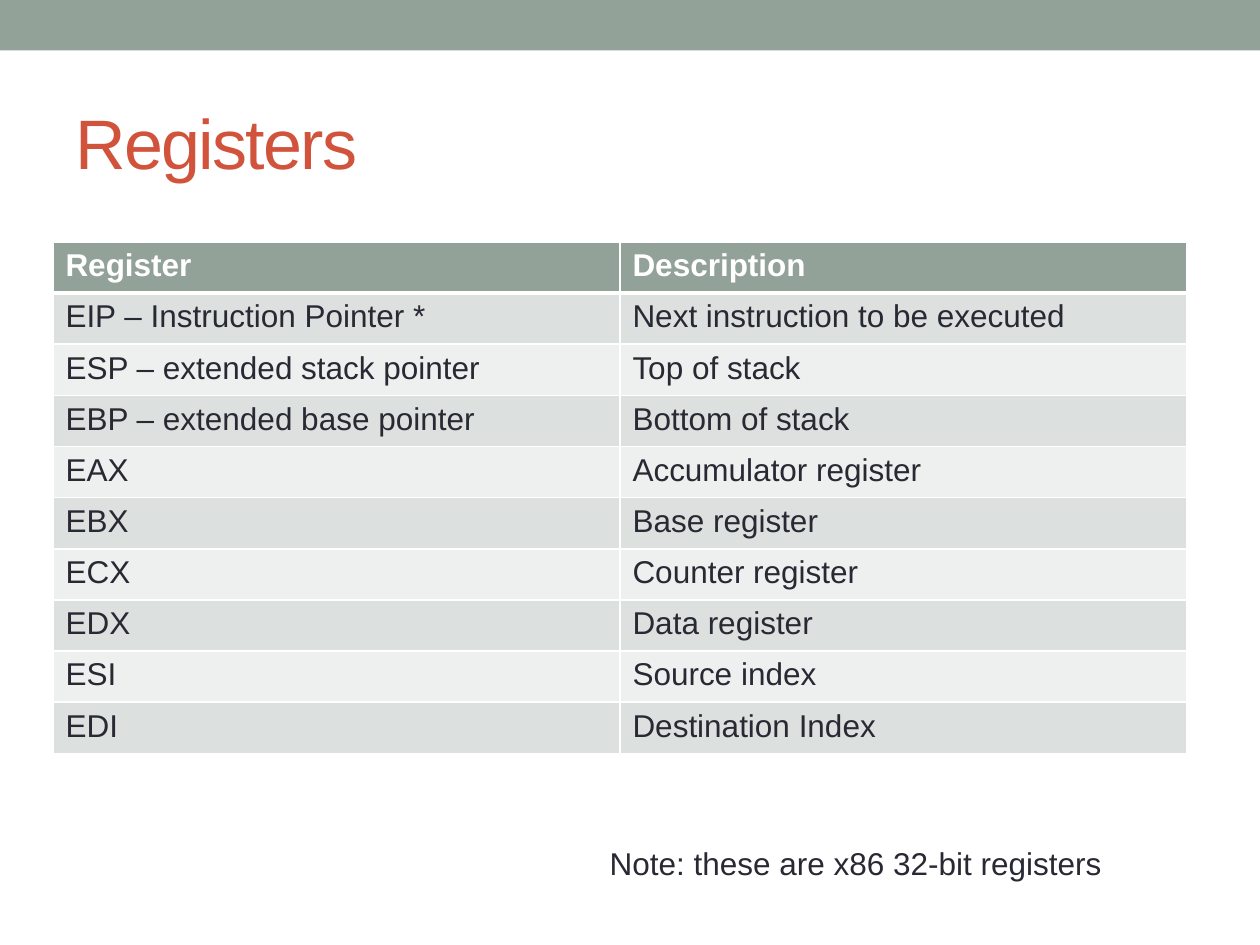
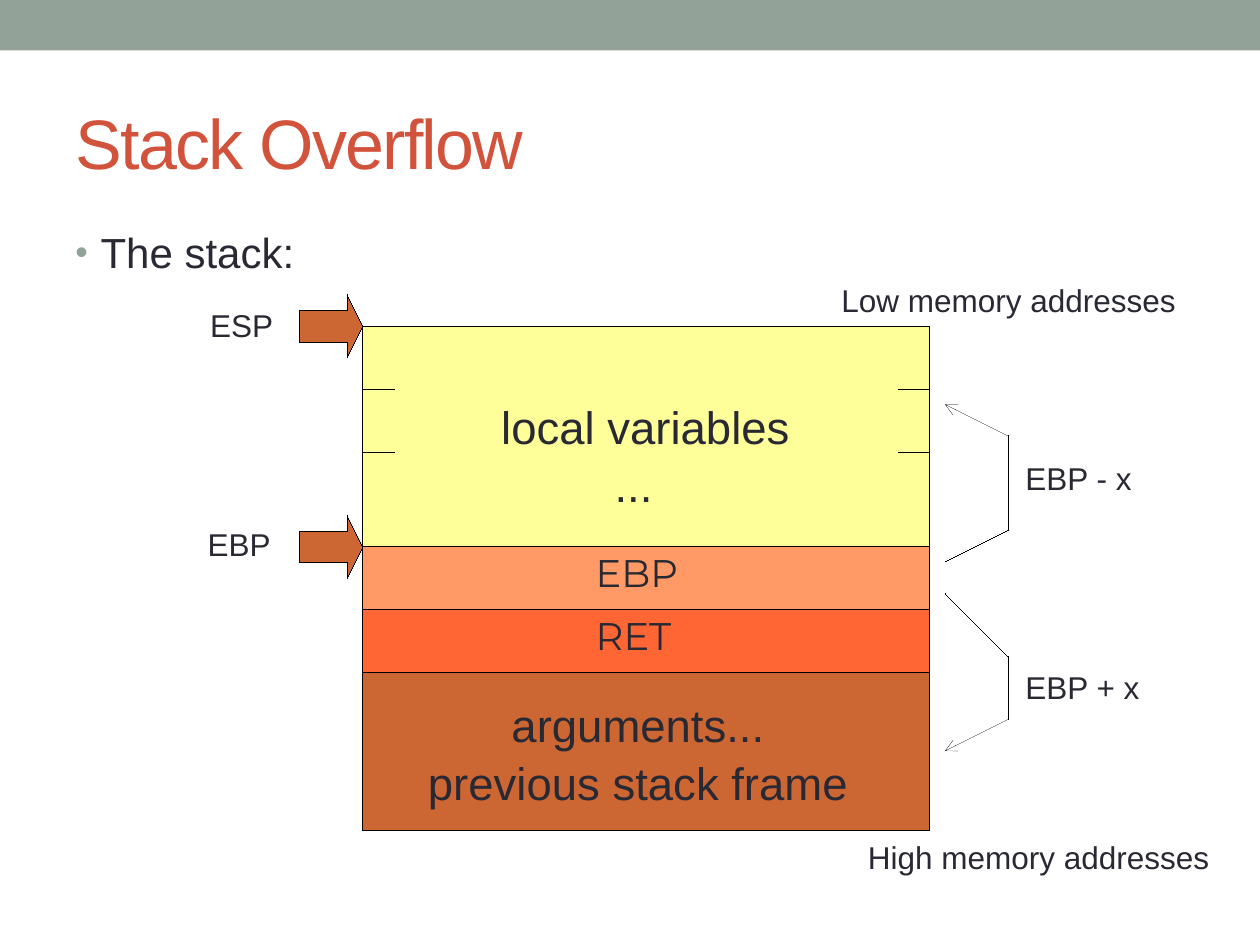
"""Build two slides on processor registers and the stack."""
from dataclasses import dataclass
from itertools import pairwise

from lxml.etree import SubElement as Sub
from pptx import Presentation
from pptx.dml.color import RGBColor as Rgb
from pptx.enum.shapes import MSO_CONNECTOR as Link, MSO_SHAPE as Form
from pptx.enum.text import MSO_ANCHOR as Anchor, PP_ALIGN as Align
from pptx.oxml.ns import qn
from pptx.util import Emu, Pt

SCALE = 9144


@dataclass(frozen=True)
class Theme:
    """Colours, fonts and type sizes of the deck."""

    sage: str = "93A299"
    brick: str = "D2533C"
    ink: str = "292934"
    white: str = "FFFFFF"
    black: str = "000000"
    dark: str = "DCE0DE"
    pale: str = "EEF0EF"
    rust: str = "CC6633"
    flame: str = "FF6633"
    peach: str = "FF9966"
    lemon: str = "FFFF99"
    font: str = "Arial"
    alt: str = "Montserrat"
    head: int = 40
    lead: int = 24
    big: int = 26
    mid: int = 22
    small: int = 18
    loose: float = 1.06


@dataclass(frozen=True)
class Box:
    """A place on the slide, in px."""

    left: int
    top: int
    wide: int
    high: int

    def emu(self) -> tuple:
        """Give the four lengths in EMU."""
        return tuple(px(n) for n in (self.left, self.top, self.wide, self.high))


@dataclass(frozen=True)
class Label:
    """Lines of text in a box."""

    box: Box
    lines: tuple
    size: int
    font: str = Theme.font
    align: Align = Align.LEFT
    space: float = 1.0
    shift: int = 0


@dataclass(frozen=True)
class Band:
    """One filled layer of the stack."""

    top: int
    high: int
    fill: str


T = Theme()
LEFT, RIGHT, WIDE = 288, 738, 450

ROWS = (
    ("Register", "Description"),
    ("EIP – Instruction Pointer *", "Next instruction to be executed"),
    ("ESP – extended stack pointer", "Top of stack"),
    ("EBP – extended base pointer", "Bottom of stack"),
    ("EAX", "Accumulator register"),
    ("EBX", "Base register"),
    ("ECX", "Counter register"),
    ("EDX", "Data register"),
    ("ESI", "Source index"),
    ("EDI", "Destination Index"),
)

BANDS = (
    Band(534, 125, T.rust),
    Band(484, 50, T.flame),
    Band(434, 50, T.peach),
    Band(259, 175, T.lemon),
)

LABELS = (
    Label(Box(463, 431, 200, 45), ("EBP",), T.mid, T.alt),
    Label(Box(463, 481, 200, 45), ("RET",), T.mid, T.alt),
    Label(Box(288, 546, 437, 150), ("arguments...", "previous stack frame"),
          T.big, align=Align.CENTER, space=T.loose),
    Label(Box(388, 309, 537, 100), ("local variables", "..."),
          T.big, space=T.loose, shift=90),
    Label(Box(157, 238, 133, 42), ("ESP",), T.small),
    Label(Box(155, 412, 133, 42), ("EBP",), T.small),
    Label(Box(804, 359, 133, 42), ("EBP - x",), T.small),
    Label(Box(804, 525, 133, 42), ("EBP + x",), T.small),
    Label(Box(658, 218, 328, 40), ("Low memory addresses",), T.small),
    Label(Box(679, 660, 320, 40), ("High memory addresses",), T.small),
)

PATHS = (
    ((750, 446), (800, 421), (800, 346), (750, 321)),
    ((750, 471), (800, 521), (800, 571), (750, 596)),
)


def px(num: int) -> Emu:
    """Turn px into EMU."""
    return Emu(num * SCALE)


def tint(hue: str) -> Rgb:
    """Turn a hex code into a colour."""
    return Rgb.from_string(hue)


def write(para, text: str, size: int, hue: str = T.ink,
          font: str = T.font, bold: bool = False):
    """Add one styled run to a paragraph."""
    run = para.add_run()
    run.text = text
    run.font.name = font
    run.font.size = Pt(size)
    run.font.bold = bold
    run.font.color.rgb = tint(hue)
    return run


def hair(shape) -> None:
    """Give a shape a black hairline."""
    shape.line.color.rgb = tint(T.black)
    shape.element.spPr.get_or_add_ln().set("w", "0")


def solid(slide, form: Form, box: Box, fill: str, edge: bool = True):
    """Draw a filled preset shape."""
    shape = slide.shapes.add_shape(form, *box.emu())
    shape.shadow.inherit = False
    shape.fill.solid()
    shape.fill.fore_color.rgb = tint(fill)
    if edge:
        hair(shape)
    else:
        shape.line.fill.background()
    return shape


def line(slide, start: tuple, end: tuple, tip: bool = False) -> None:
    """Draw a hairline, with an arrow tip if asked."""
    wire = slide.shapes.add_connector(
        Link.STRAIGHT, *(px(n) for n in (*start, *end)))
    hair(wire)
    props = wire.element.spPr
    if tip:
        Sub(props.get_or_add_ln(), qn("a:tailEnd"), type="arrow")
    Sub(props, qn("a:effectLst"))


def label(slide, item: Label):
    """Draw a text box and return its first paragraph."""
    frame = slide.shapes.add_textbox(*item.box.emu()).text_frame
    frame.word_wrap = True
    for num, text in enumerate(item.lines):
        para = frame.add_paragraph() if num else frame.paragraphs[0]
        para.alignment = item.align
        para.line_spacing = item.space
        if num and item.shift:
            para._p.get_or_add_pPr().set("marL", str(px(item.shift)))
        write(para, text, item.size, font=item.font)
    return frame.paragraphs[0]


def bullet(para) -> None:
    """Give a paragraph a sage bullet and a hanging indent."""
    para.space_before = Pt(5)
    props = para._p.get_or_add_pPr()
    props.set("marL", str(px(20)))
    props.set("indent", str(px(-20)))
    Sub(Sub(props, qn("a:buClr")), qn("a:srgbClr"), val=T.sage)
    Sub(props, qn("a:buSzPct"), val="85000")
    Sub(props, qn("a:buFont"), typeface=T.font)
    Sub(props, qn("a:buChar"), char="•")


def start(deck, text: str):
    """Add a slide with the top band and a title."""
    slide = deck.slides.add_slide(deck.slide_layouts[5])
    solid(slide, Form.RECTANGLE, Box(0, 0, 1000, 40), T.sage, edge=False)
    title = slide.shapes.title
    title.left, title.top, title.width, title.height = Box(50, 58, 900, 108).emu()
    frame = title.text_frame
    frame.vertical_anchor = Anchor.MIDDLE
    para = frame.paragraphs[0]
    para.alignment = Align.LEFT
    run = write(para, text, T.head, T.brick)
    run.font._element.set("spc", "-100")
    return slide


def rule(cell, side: str, width: int) -> None:
    """Draw one white cell border."""
    edge = Sub(cell._tc.get_or_add_tcPr(), qn(f"a:ln{side}"), w=str(Pt(width)))
    Sub(Sub(edge, qn("a:solidFill")), qn("a:srgbClr"), val=T.white)


def grid(slide, rows: tuple, box: Box) -> None:
    """Draw a banded table with a header row."""
    table = slide.shapes.add_table(len(rows), len(rows[0]), *box.emu()).table
    for i, row in enumerate(rows):
        head = i == 0
        fill = T.sage if head else T.dark if i % 2 else T.pale
        for j, text in enumerate(row):
            cell = table.cell(i, j)
            for side in "LRTB":
                thick = (i, side) in ((0, "B"), (1, "T"))
                rule(cell, side, 3 if thick else 1)
            cell.fill.solid()
            cell.fill.fore_color.rgb = tint(fill)
            write(cell.text_frame.paragraphs[0], text, T.small,
                  T.white if head else T.ink, bold=head)


def table(deck) -> None:
    """Build the slide that lists the registers."""
    slide = start(deck, "Registers")
    grid(slide, ROWS, Box(42, 192, 900, 406))
    label(slide, Label(Box(474, 665, 467, 40),
                       ("Note: these are x86 32-bit registers",), T.small))


def stack(deck) -> None:
    """Build the slide that shows the stack frame."""
    slide = start(deck, "Stack Overflow")
    bullet(label(slide, Label(Box(50, 175, 900, 533), ("The stack:",), T.lead)))
    for band in BANDS:
        solid(slide, Form.RECTANGLE, Box(LEFT, band.top, WIDE, band.high), band.fill)
    for y in (309, 359):
        line(slide, (LEFT, y), (LEFT + 25, y))
        line(slide, (RIGHT, y), (RIGHT - 25, y))
    for y in (259, 434):
        arrow = solid(slide, Form.RIGHT_ARROW, Box(LEFT - 50, y - 25, 50, 50), T.rust)
        arrow.adjustments[0] = 0.5
        arrow.adjustments[1] = 0.25
    for path in PATHS:
        for a, b in pairwise(path):
            line(slide, a, b, tip=b == path[-1])
    for item in LABELS:
        label(slide, item)


def main() -> None:
    """Build and save the deck."""
    deck = Presentation()
    deck.slide_width, deck.slide_height = px(1000), px(750)
    table(deck)
    stack(deck)
    deck.save("out.pptx")


if __name__ == "__main__":
    main()
